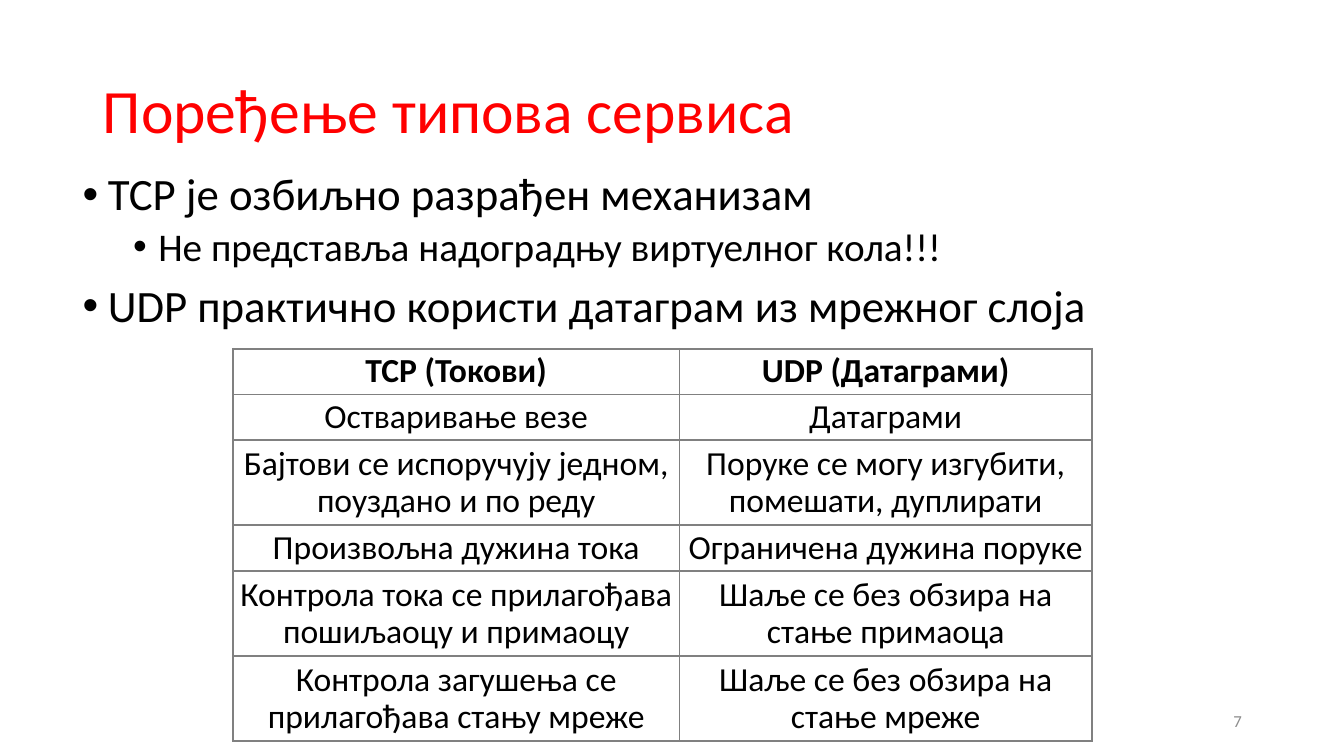
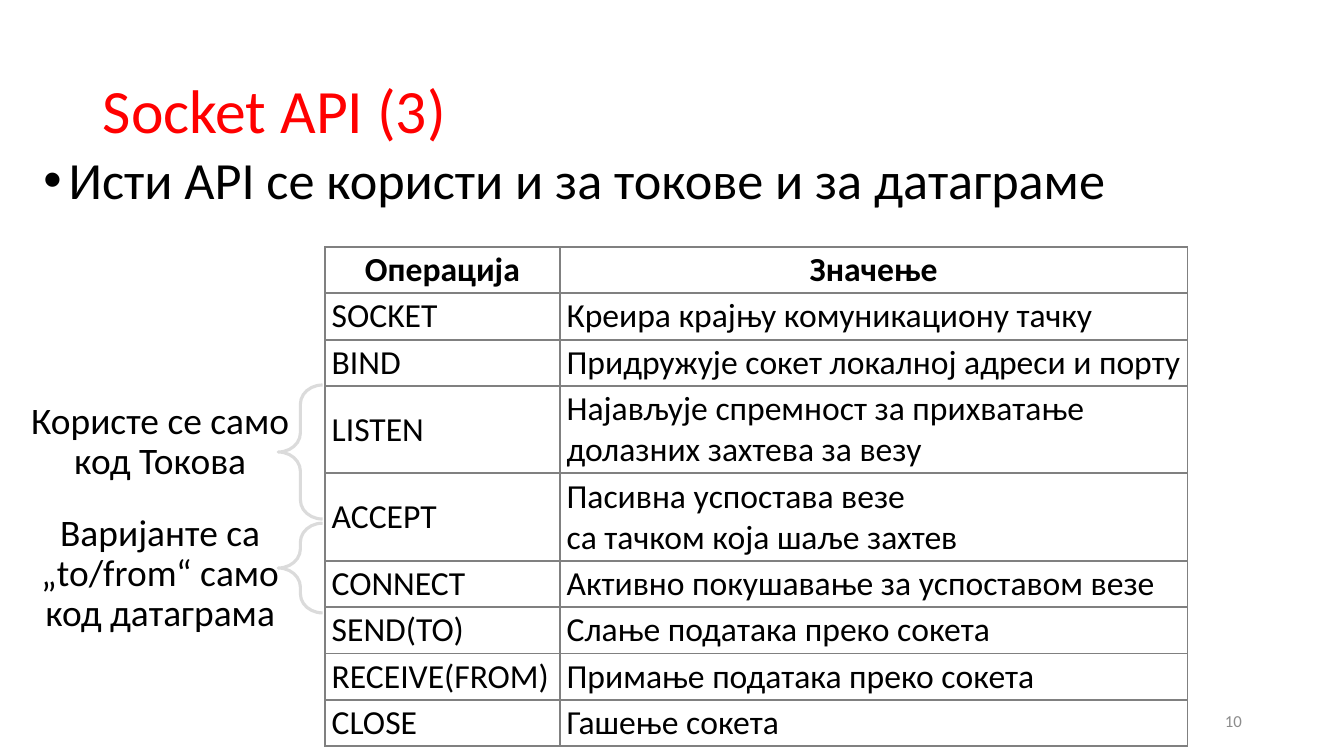
from pptx import Presentation
from pptx.dml.color import RGBColor as RGB
from pptx.enum.shapes import MSO_SHAPE as SHAPE
from pptx.enum.text import MSO_ANCHOR as ANCHOR, MSO_AUTO_SIZE as FIT, PP_ALIGN as ALIGN
from pptx.oxml import parse_xml
from pptx.oxml.ns import nsdecls
from pptx.util import Inches, Pt

COLORS = {
    "title": "FF0000", "text": "000000", "number": "8C8C8C",
    "border": "808080", "brace": "DBDBDB", "paper": "FFFFFF",
}
FONT = "Calibri"

prs = Presentation()
prs.slide_width, prs.slide_height = Inches(13.33), Inches(7.5)
W, H = prs.slide_width / 100, prs.slide_height / 100


def box(x, y, w, h):
    return int(x * W), int(y * H), int(w * W), int(h * H)


def write(p, text, size, color="text", bold=False, align=ALIGN.LEFT,
          spacing=0.9, before=0, bullet=None):
    p.text = text
    p.alignment, p.line_spacing, p.space_before = align, spacing, Pt(before)
    for r in p.runs:
        r.font.size, r.font.bold, r.font.name = Pt(size), bold, FONT
        r.font.color.rgb = RGB.from_string(COLORS[color])
    if bullet is not None:
        p.level = bullet
        pPr = p._p.get_or_add_pPr()
        pPr.set("marL", str(Inches(0.25 + 0.5 * bullet)))
        pPr.set("indent", str(-Inches(0.25)))
        pPr.append(parse_xml(f'<a:buFont {nsdecls("a")} typeface="Arial"/>'))
        pPr.append(parse_xml(f'<a:buChar {nsdecls("a")} char="•"/>'))


slides = [
    dict(
        title="Поређење типова сервиса", number="7",
        body=(5.4, 22.1, 89.27, 63.47),
        bullets=[
            (0, 32, "TCP је озбиљно разрађен механизам"),
            (1, 28, "Не представља надоградњу виртуелног кола!!!"),
            (0, 32, "UDP практично користи датаграм из мрежног слоја"),
        ],
        corner=(17.33, 46.13), cols=(33.23, 30.68),
        row=6.05, tall_row=11.27, tall=(2, 4, 5), align=ALIGN.CENTER, spacing=0.9,
        cells=[
            ("TCP (Токови)", "UDP (Датаграми)"),
            ("Остваривање везе", "Датаграми"),
            ("Бајтови се испоручују једном, поуздано и по реду",
             "Поруке се могу изгубити, помешати, дуплирати"),
            ("Произвољна дужина тока", "Ограничена дужина поруке"),
            ("Контрола тока се прилагођава пошиљаоцу и примаоцу",
             "Шаље се без обзира на стање примаоца"),
            ("Контрола загушења се прилагођава стању мреже",
             "Шаље се без обзира на стање мреже"),
        ],
        notes=[],
    ),
    dict(
        title="Socket API (3)", number="10",
        body=(2.48, 19.73, 95.05, 66),
        bullets=[(0, 37.3, "Исти API се користи и за токове и за датаграме")],
        corner=(24.18, 32.67), cols=(17.48, 46.7),
        row=6.13, tall_row=11.53, tall=(3, 4), align=ALIGN.LEFT, spacing=1.0,
        cells=[
            ("Операција", "Значење"),
            ("SOCKET", "Креира крајњу комуникациону тачку"),
            ("BIND", "Придружује сокет локалној адреси и порту"),
            ("LISTEN", "Најављује спремност за прихватање долазних захтева за везу"),
            ("ACCEPT", "Пасивна успостава везе\nса тачком која шаље захтев"),
            ("CONNECT", "Активно покушавање за успоставом везе"),
            ("SEND(TO)", "Слање података преко сокета"),
            ("RECEIVE(FROM)", "Примање података преко сокета"),
            ("CLOSE", "Гашење сокета"),
        ],
        notes=[
            ("Користе се само код Токова", 50.93, 17.73, 52.53, 12.13),
            ("Варијанте са „to/from“ само код датаграма", 69.2, 11.87, 67.33, 17.47),
        ],
    ),
]

for d in slides:
    s = prs.slides.add_slide(prs.slide_layouts[1])
    title, body = s.shapes.title, s.placeholders[1]
    for sp, place in ((title, (6.9, 5.33, 86.25, 19.33)), (body, d["body"])):
        sp.left, sp.top, sp.width, sp.height = box(*place)
        sp.text_frame.auto_size = FIT.NONE
    title.text_frame.vertical_anchor = ANCHOR.MIDDLE
    write(title.text_frame.paragraphs[0], d["title"], 44, color="title")

    tf = body.text_frame
    for i, (level, size, text) in enumerate(d["bullets"]):
        p = tf.add_paragraph() if i else tf.paragraphs[0]
        write(p, text, size, before=10 - 5 * level, bullet=level)

    heights = [d["tall_row"] if i in d["tall"] else d["row"]
               for i in range(len(d["cells"]))]
    table = s.shapes.add_table(len(heights), len(d["cols"]),
                               *box(*d["corner"], sum(d["cols"]), sum(heights))).table
    table.first_row = table.horz_banding = False
    for column, w in zip(table.columns, d["cols"]):
        column.width = int(w * W)
    for i, texts in enumerate(d["cells"]):
        table.rows[i].height = int(heights[i] * H)
        for j, text in enumerate(texts):
            cell = table.cell(i, j)
            cell.fill.solid()
            cell.fill.fore_color.rgb = RGB.from_string(COLORS["paper"])
            cell.vertical_anchor = ANCHOR.MIDDLE
            cell.margin_left = cell.margin_right = Pt(4.8)
            cell.margin_top = cell.margin_bottom = Pt(1.9)
            write(cell.text_frame.paragraphs[0], text, 24, bold=i == 0,
                  align=d["align"] if i else ALIGN.CENTER, spacing=d["spacing"])
            tcPr = cell._tc.get_or_add_tcPr()
            for k, side in enumerate("LRTB"):
                tcPr.insert(k, parse_xml(
                    f'<a:ln{side} {nsdecls("a")} w="{Pt(1.5)}"><a:solidFill>'
                    f'<a:srgbClr val="{COLORS["border"]}"/></a:solidFill></a:ln{side}>'))

    for text, brace_y, brace_h, y, h in d["notes"]:
        brace = s.shapes.add_shape(SHAPE.LEFT_BRACE, *box(20.7, brace_y, 3.3, brace_h))
        brace.adjustments[0], brace.adjustments[1] = 0.43, 0.5
        brace.shadow.inherit = False
        brace.fill.background()
        brace.line.color.rgb = RGB.from_string(COLORS["brace"])
        brace.line.width = Pt(2.25)
        tf = s.shapes.add_textbox(*box(1.35, y, 21.15, h)).text_frame
        tf.word_wrap = True
        write(tf.paragraphs[0], text, 26.7, align=ALIGN.CENTER)

    tf = s.shapes.add_textbox(*box(70.65, 92.67, 22.5, 5.33)).text_frame
    tf.word_wrap, tf.vertical_anchor = True, ANCHOR.MIDDLE
    write(tf.paragraphs[0], d["number"], 12, color="number",
          align=ALIGN.RIGHT, spacing=1.0)

prs.save("out.pptx")
